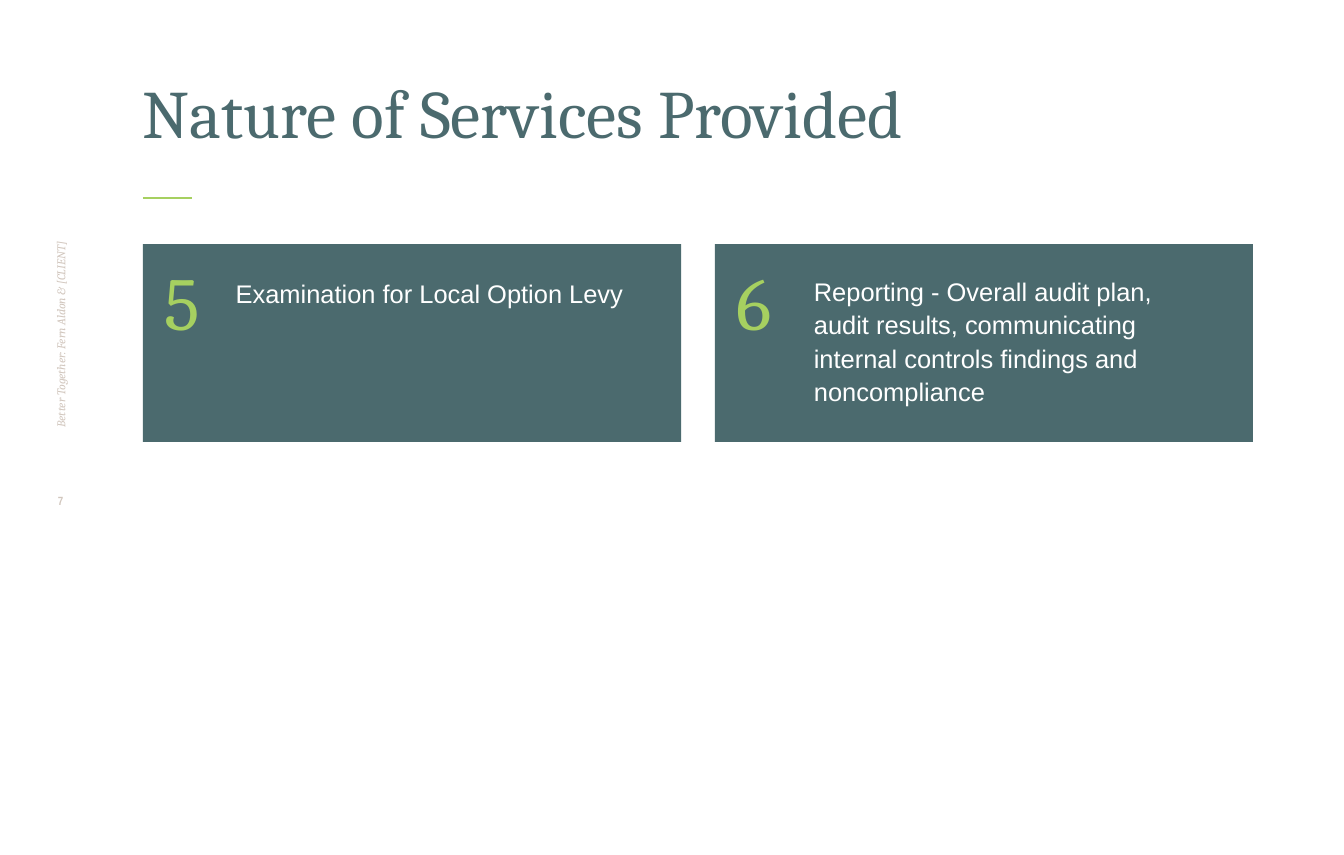
"""Build the "Nature of Services Provided" slide with two numbered service cards."""
from pptx import Presentation
from pptx.dml.color import RGBColor as Rgb
from pptx.enum.shapes import MSO_CONNECTOR as Connector, MSO_SHAPE as Shape
from pptx.enum.text import MSO_ANCHOR as Anchor, MSO_AUTO_SIZE as AutoSize, PP_ALIGN as Align
from pptx.oxml.ns import qn
from pptx.util import Cm, Pt
from lxml import etree

TEAL, GREEN, SAND, WHITE = map(Rgb.from_string, ("4B6A6E", "A6D060", "D1C6BD", "FFFFFF"))
THEME = {
    "title": (TEAL, {"name": "Cambria", "size": Pt(40)}),
    "number": (GREEN, {"name": "Cambria", "size": Pt(44)}),
    "service": (WHITE, {"name": "Arial", "size": Pt(15)}),
    "tagline": (SAND, {"name": "Cambria", "size": Pt(7), "italic": True}),
    "page": (SAND, {"name": "Arial Narrow", "size": Pt(7), "bold": True}),
}


def write(shape, text, style, inset=0, anchor=Anchor.TOP, align=Align.LEFT, spacing=1.0):
    """Fill a shape with one paragraph in a theme style."""
    frame = shape.text_frame
    frame.text = text
    frame_format = {"word_wrap": True, "auto_size": AutoSize.NONE, "vertical_anchor": anchor}
    frame_format |= {f"margin_{side}": Cm(inset) for side in ("left", "right", "top", "bottom")}
    paragraph = frame.paragraphs[0]
    color, font_format = THEME[style]
    for target, values in (
        (frame, frame_format),
        (paragraph, {"alignment": align, "line_spacing": spacing}),
        (paragraph.runs[0].font, font_format),
    ):
        for key, value in values.items():
            setattr(target, key, value)
    paragraph.runs[0].font.color.rgb = color


def add_text(left, top, width, height, text, style, **layout):
    """Add a text box measured in centimetres."""
    box = slide.shapes.add_textbox(Cm(left), Cm(top), Cm(width), Cm(height))
    write(box, text, style, **layout)
    return box


deck = Presentation()
deck.slide_width, deck.slide_height = Cm(27.94), Cm(17.78)
slide = deck.slides.add_slide(deck.slide_layouts.get_by_name("Title Only"))

title = slide.shapes.title
title.left, title.top, title.width, title.height = Cm(2.97), Cm(1.27), Cm(23.06), Cm(1.9)
write(title, "Nature of Services Provided", "title", anchor=Anchor.BOTTOM)

accent = slide.shapes.add_connector(Connector.STRAIGHT, Cm(2.97), Cm(4.12), Cm(3.99), Cm(4.12))
accent.line.color.rgb = GREEN
accent.line.width = Pt(1)
etree.SubElement(accent.element.spPr, qn("a:effectLst"))

tagline = add_text(0.79, 1.27, 0.94, 7.62, "Better Together: Fern Aldon & [CLIENT]", "tagline",
                   anchor=Anchor.MIDDLE)
tagline.text_frame._txBody.bodyPr.set("vert", "vert270")
add_text(0.79, 10.26, 0.94, 0.97, "7", "page", align=Align.CENTER)

SERVICES = [
    ("5", "Examination for Local Option Levy", 1.8, 5.59),
    ("6", "Reporting - Overall audit plan, audit results, communicating internal controls "
          "findings and noncompliance", 1.93, 5.54),
]
CARD_TOP, CARD_WIDTH, CARD_STEP = 5.08, 11.19, 11.89
for index, (number, service, indent, service_top) in enumerate(SERVICES):
    left = 2.97 + index * CARD_STEP
    card = slide.shapes.add_shape(Shape.RECTANGLE, Cm(left), Cm(CARD_TOP), Cm(CARD_WIDTH), Cm(4.11))
    card.shadow.inherit = False
    card.fill.solid()
    card.fill.fore_color.rgb = TEAL
    card.line.fill.background()
    add_text(left + indent, service_top, 8.32, 3.2, service, "service", inset=0.13, spacing=1.1)
    add_text(left + 0.21, CARD_TOP, 1.24, 2.13, number, "number", inset=0.25)

deck.save("out.pptx")
